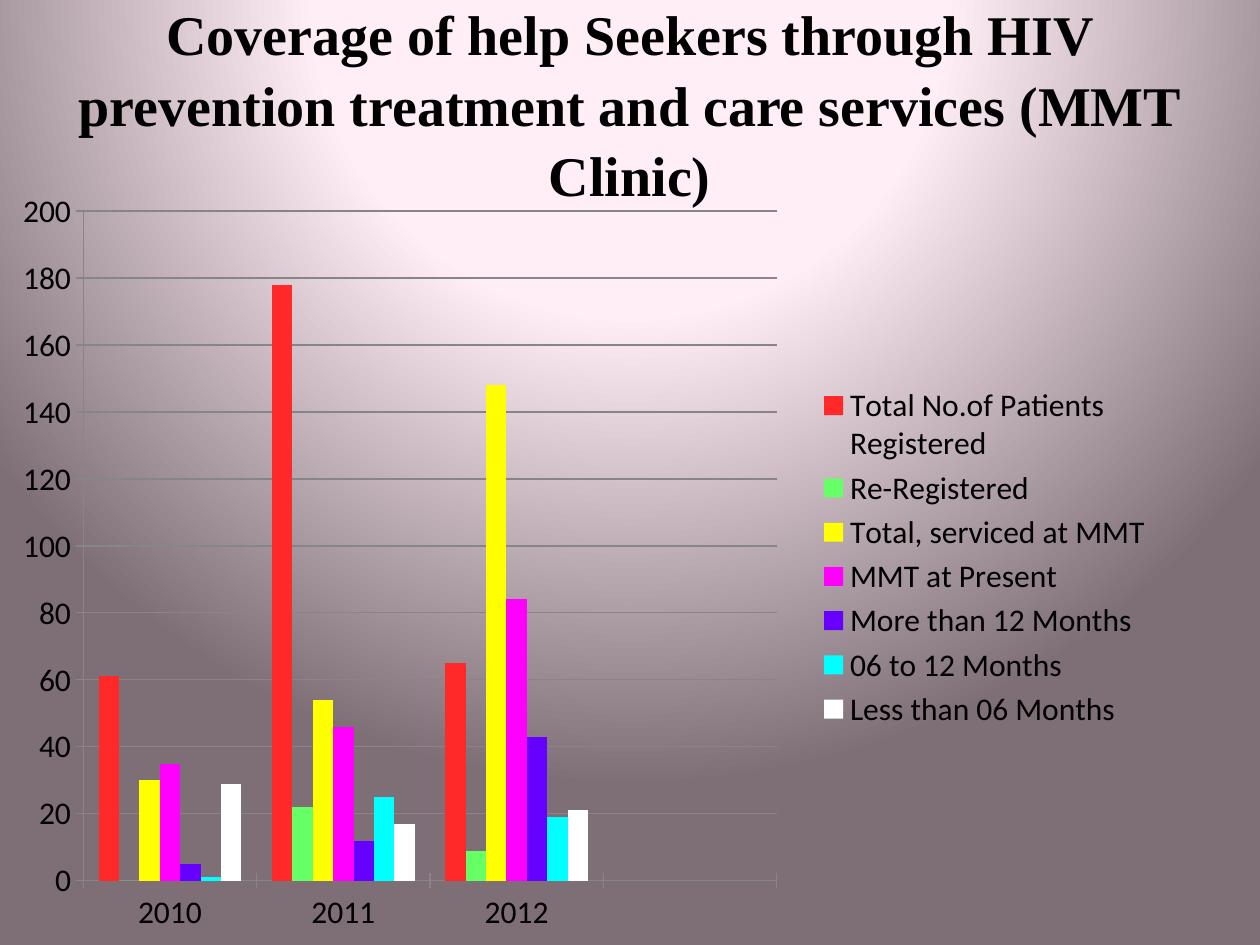
from lxml.etree import SubElement
from pptx import Presentation
from pptx.chart.data import CategoryChartData
from pptx.dml.color import RGBColor
from pptx.enum.chart import XL_CHART_TYPE as ChartType
from pptx.enum.chart import XL_LEGEND_POSITION as LegendPosition
from pptx.enum.chart import XL_TICK_MARK as TickMark
from pptx.enum.text import MSO_ANCHOR as Anchor
from pptx.enum.text import MSO_AUTO_SIZE as AutoSize
from pptx.enum.text import PP_ALIGN as Align
from pptx.oxml.ns import qn
from pptx.util import Pt

BLACK = RGBColor(0x00, 0x00, 0x00)
GRID_GRAY = RGBColor(0x86, 0x86, 0x86)
RED = RGBColor(0xFF, 0x29, 0x29)
GREEN = RGBColor(0x66, 0xFF, 0x66)
YELLOW = RGBColor(0xFF, 0xFF, 0x00)
MAGENTA = RGBColor(0xFF, 0x00, 0xFF)
VIOLET = RGBColor(0x66, 0x00, 0xFF)
CYAN = RGBColor(0x00, 0xFF, 0xFF)
WHITE = RGBColor(0xFF, 0xFF, 0xFF)

BACKGROUND_STOPS = [
    (0, RGBColor(0xFF, 0xF1, 0xF8)),
    (40, RGBColor(0xFF, 0xEE, 0xF6)),
    (100, RGBColor(0x7E, 0x6E, 0x75)),
]
BACKGROUND_FOCUS = {"l": 50, "t": -80, "r": 50, "b": 180}

TITLE = ("Coverage of help Seekers through HIV prevention treatment "
         "and care services (MMT Clinic)")
YEARS = ["2010", "2011", "2012", ""]
PATIENT_GROUPS = [
    ("Total No.of Patients Registered", (61, 178, 65, None), RED),
    ("Re-Registered", (0, 22, 9, None), GREEN),
    ("Total, serviced at MMT", (30, 54, 148, None), YELLOW),
    ("MMT at Present", (35, 46, 84, None), MAGENTA),
    ("More than 12 Months", (5, 12, 43, None), VIOLET),
    ("06 to 12 Months", (1, 25, 19, None), CYAN),
    ("Less than 06 Months", (29, 17, 21, None), WHITE),
]
PLOT_LAYOUT = {"x": 0.07, "y": 0.05, "w": 0.6, "h": 0.87}
LEGEND_LAYOUT = {"x": 0.7, "y": 0.27, "w": 0.3, "h": 0.46}


def set_format(target, values):
    for name, value in values.items():
        setattr(target, name, value)


def paint_background(slide):
    """Fill the slide with a circular gradient centred above its top edge."""
    slide.background.fill.gradient()
    gradient = slide.background._cSld.find(".//" + qn("a:gradFill"))
    for child in list(gradient):
        gradient.remove(child)
    stops = SubElement(gradient, qn("a:gsLst"))
    for percent, color in BACKGROUND_STOPS:
        stop = SubElement(stops, qn("a:gs"), pos=str(percent * 1000))
        SubElement(stop, qn("a:srgbClr"), val=str(color))
    circle = SubElement(gradient, qn("a:path"), {"path": "circle"})
    focus = {side: str(percent * 1000)
             for side, percent in BACKGROUND_FOCUS.items()}
    SubElement(circle, qn("a:fillToRect"), focus)


def write_title(slide):
    title = slide.shapes.title
    set_format(title, {"left": Pt(36), "top": Pt(21.6),
                       "width": Pt(648), "height": Pt(90)})
    frame = title.text_frame
    frame.text = TITLE
    set_format(frame, {"auto_size": AutoSize.NONE, "word_wrap": True,
                       "vertical_anchor": Anchor.MIDDLE,
                       "margin_left": Pt(4), "margin_right": Pt(4),
                       "margin_bottom": Pt(20)})
    heading = frame.paragraphs[0]
    set_format(heading, {"alignment": Align.CENTER, "line_spacing": 1.05})
    font = heading.runs[0].font
    set_format(font, {"name": "Times New Roman", "size": Pt(32), "bold": True})
    font.color.rgb = BLACK


def place_chart_part(part, fractions, inner=False):
    """Set a manual layout, in fractions of the chart's size."""
    layout = part.find(qn("c:layout"))
    if layout is None:
        layout = SubElement(part, qn("c:layout"))
        anchor = part.find(qn("c:legendPos"))
        if anchor is None:
            part.insert(0, layout)
        else:
            anchor.addnext(layout)
    for child in list(layout):
        layout.remove(child)
    manual = SubElement(layout, qn("c:manualLayout"))
    if inner:
        SubElement(manual, qn("c:layoutTarget"), val="inner")
    for axis in "xy":
        SubElement(manual, qn(f"c:{axis}Mode"), val="edge")
    for side, fraction in fractions.items():
        SubElement(manual, qn(f"c:{side}"), val=str(fraction))


def style_axes(chart):
    values = chart.value_axis
    set_format(values, {"minimum_scale": 0, "maximum_scale": 200,
                        "major_unit": 20, "has_major_gridlines": True})
    for axis in (chart.category_axis, values):
        axis.major_tick_mark = TickMark.CROSS
    for line in (chart.category_axis.format.line, values.format.line,
                 values.major_gridlines.format.line):
        line.color.rgb = GRID_GRAY
        line.width = Pt(0.75)


def add_coverage_chart(slide):
    data = CategoryChartData()
    data.categories = YEARS
    for name, counts, _ in PATIENT_GROUPS:
        data.add_series(name, counts)
    chart = slide.shapes.add_chart(
        ChartType.COLUMN_CLUSTERED,
        Pt(1.44), Pt(98.64), Pt(660.24), Pt(439.92), data).chart
    set_format(chart, {"has_title": False, "has_legend": True})
    set_format(chart.font, {"name": "Calibri", "size": Pt(18)})
    chart.font.color.rgb = BLACK
    set_format(chart.legend, {"position": LegendPosition.RIGHT,
                              "include_in_layout": False})
    plot = chart.plots[0]
    set_format(plot, {"gap_width": 150, "overlap": 0,
                      "vary_by_categories": False})
    for series, (_, _, color) in zip(plot.series, PATIENT_GROUPS):
        series.invert_if_negative = False
        series.format.fill.solid()
        series.format.fill.fore_color.rgb = color
    style_axes(chart)
    chart_root = chart._chartSpace.find(qn("c:chart"))
    place_chart_part(chart_root.find(qn("c:plotArea")), PLOT_LAYOUT, inner=True)
    place_chart_part(chart_root.find(qn("c:legend")), LEGEND_LAYOUT)


def main():
    deck = Presentation()
    set_format(deck, {"slide_width": Pt(720), "slide_height": Pt(540)})
    slide = deck.slides.add_slide(deck.slide_layouts.get_by_name("Title Only"))
    paint_background(slide)
    write_title(slide)
    add_coverage_chart(slide)
    deck.save("out.pptx")


if __name__ == "__main__":
    main()
